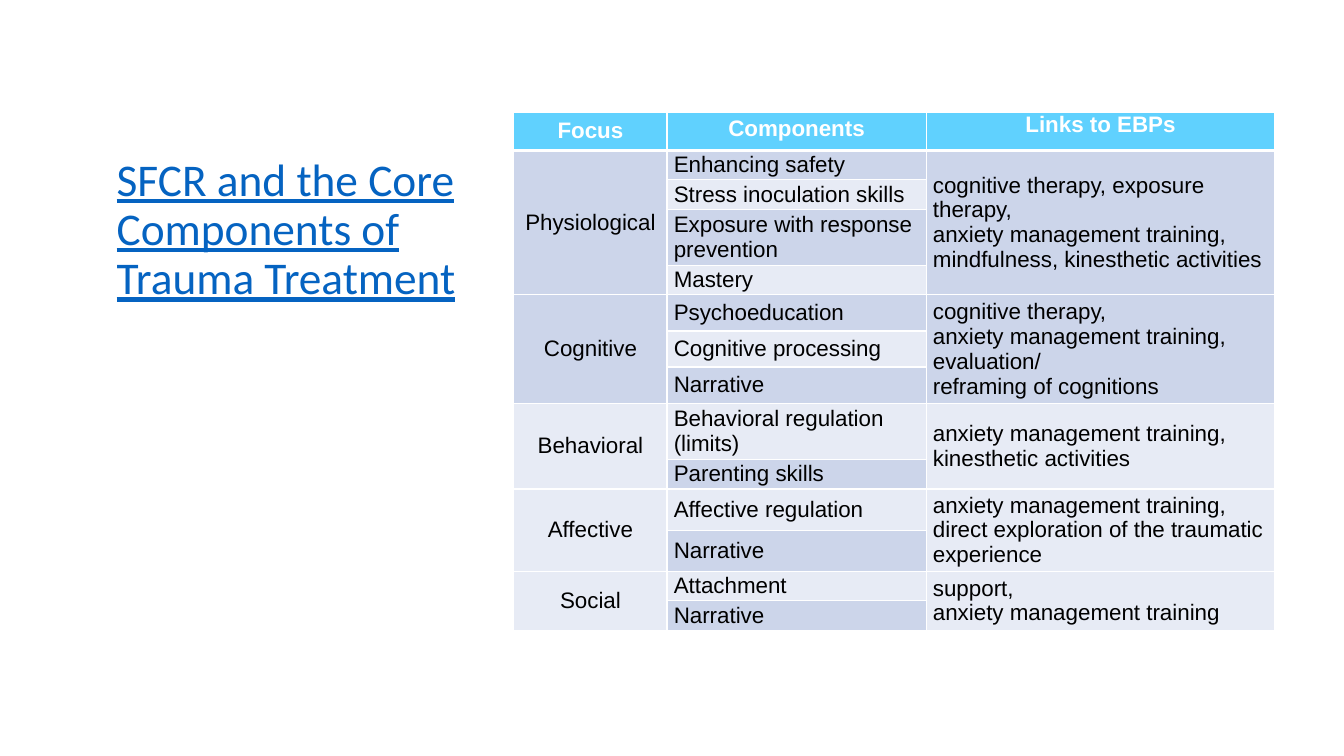
"""Build a slide that links core trauma treatment components to evidence-based practices."""
from lxml import etree
from pptx import Presentation
from pptx.dml.color import RGBColor
from pptx.enum.text import MSO_ANCHOR, PP_ALIGN
from pptx.oxml.ns import qn
from pptx.util import Cm, Pt

LEFT, CENTER = PP_ALIGN.LEFT, PP_ALIGN.CENTER
TOP, MIDDLE = MSO_ANCHOR.TOP, MSO_ANCHOR.MIDDLE
WHITE = RGBColor(0xFF, 0xFF, 0xFF)
BLACK = RGBColor(0x00, 0x00, 0x00)
LINK_BLUE = RGBColor(0x05, 0x63, 0xC1)
HEADER_BLUE = RGBColor(0x60, 0xD1, 0xFE)
BAND_DARK = RGBColor(0xCC, 0xD5, 0xEA)
BAND_LIGHT = RGBColor(0xE7, 0xEB, 0xF5)

COLUMN_WIDTHS = (3.86, 6.53, 8.79)
HEADER_HEIGHT = 0.97
HEADERS = (("Focus", MIDDLE, 0), ("Components", TOP, 0.1), ("Links to EBPs", TOP, 0))
GROUPS = (
    ("Physiological",
     (("Enhancing safety", 0.74), ("Stress inoculation skills", 0.74),
      ("Exposure with response prevention", 1.42), ("Mastery", 0.74)),
     "cognitive therapy, exposure therapy,\n"
     "anxiety management training, mindfulness, kinesthetic activities"),
    ("Cognitive",
     (("Psychoeducation", 0.91), ("Cognitive processing", 0.91), ("Narrative", 0.91)),
     "cognitive therapy,\nanxiety management training, evaluation/\nreframing of cognitions"),
    ("Behavioral",
     (("Behavioral regulation (limits)", 1.42), ("Parenting skills", 0.74)),
     "anxiety management training, kinesthetic activities"),
    ("Affective",
     (("Affective regulation", 1.04), ("Narrative", 1.04)),
     "anxiety management training, direct exploration of the traumatic experience"),
    ("Social",
     (("Attachment", 0.74), ("Narrative", 0.74)),
     "support,\nanxiety management training"),
)


def write_text(frame, text, font="Arial", size=16, color=BLACK, bold=False,
               underline=False, align=LEFT, spacing=1.0):
    frame.text = text
    for paragraph in frame.paragraphs:
        paragraph.alignment = align
        paragraph.line_spacing = spacing
        for run in paragraph.runs:
            run.font.name = font
            run.font.size = Pt(size)
            run.font.color.rgb = color
            run.font.bold = bold
            run.font.underline = underline


def set_border(cell, side, width):
    properties = cell._tc.get_or_add_tcPr()
    line = etree.SubElement(properties, qn(f"a:ln{side}"), w=str(Pt(width)))
    fill = etree.SubElement(line, qn("a:solidFill"))
    etree.SubElement(fill, qn("a:srgbClr"), val=str(WHITE))


class SlideBuilder:
    def __init__(self, presentation):
        self.slide = presentation.slides.add_slide(presentation.slide_layouts[6])

    def title(self, text, left, top, width, height):
        frame = self.slide.shapes.add_textbox(
            Cm(left), Cm(top), Cm(width), Cm(height)).text_frame
        frame.word_wrap = True
        frame.vertical_anchor = MIDDLE
        write_text(frame, text, font="Calibri", size=32.4, color=LINK_BLUE,
                   underline=True, spacing=0.9)

    def table(self, left, top, column_widths, row_heights):
        table = self.slide.shapes.add_table(
            len(row_heights), len(column_widths), Cm(left), Cm(top),
            Cm(sum(column_widths)), Cm(sum(row_heights))).table
        table.horz_banding = False
        for column, width in zip(table.columns, column_widths):
            column.width = Cm(width)
        for index, (row, height) in enumerate(zip(table.rows, row_heights)):
            row.height = Cm(height)
            for cell in row.cells:
                self.style_cell(cell, index)
        return table

    def style_cell(self, cell, row):
        set_border(cell, "L", 1)
        set_border(cell, "R", 1)
        set_border(cell, "T", 3 if row == 1 else 1)
        set_border(cell, "B", 3 if row == 0 else 1)
        cell.fill.solid()
        band = BAND_DARK if row % 2 else BAND_LIGHT
        cell.fill.fore_color.rgb = band if row else HEADER_BLUE

    def cell(self, cell, text, anchor=MIDDLE, margin=0, **text_format):
        cell.vertical_anchor = anchor
        cell.margin_left = cell.margin_right = Cm(0.17)
        cell.margin_top = cell.margin_bottom = Cm(margin)
        write_text(cell.text_frame, text, **text_format)


def main():
    presentation = Presentation()
    presentation.slide_width = Cm(33.87)
    presentation.slide_height = Cm(19.05)
    builder = SlideBuilder(presentation)
    builder.title("SFCR and the Core\vComponents of Trauma Treatment", 2.69, 3.35, 9.12, 4.95)

    heights = [HEADER_HEIGHT]
    heights += [height for _, components, _ in GROUPS for _, height in components]
    table = builder.table(12.95, 2.82, COLUMN_WIDTHS, heights)
    for column, (text, anchor, margin) in enumerate(HEADERS):
        builder.cell(table.cell(0, column), text, anchor, margin,
                     color=WHITE, bold=True, align=CENTER)

    first = 1
    for focus, components, links in GROUPS:
        last = first + len(components) - 1
        for column, text, align in ((0, focus, CENTER), (2, links, LEFT)):
            table.cell(first, column).merge(table.cell(last, column))
            builder.cell(table.cell(first, column), text, align=align)
        for row, (component, _) in enumerate(components, first):
            builder.cell(table.cell(row, 1), component)
        first = last + 1
    presentation.save("out.pptx")


if __name__ == "__main__":
    main()
